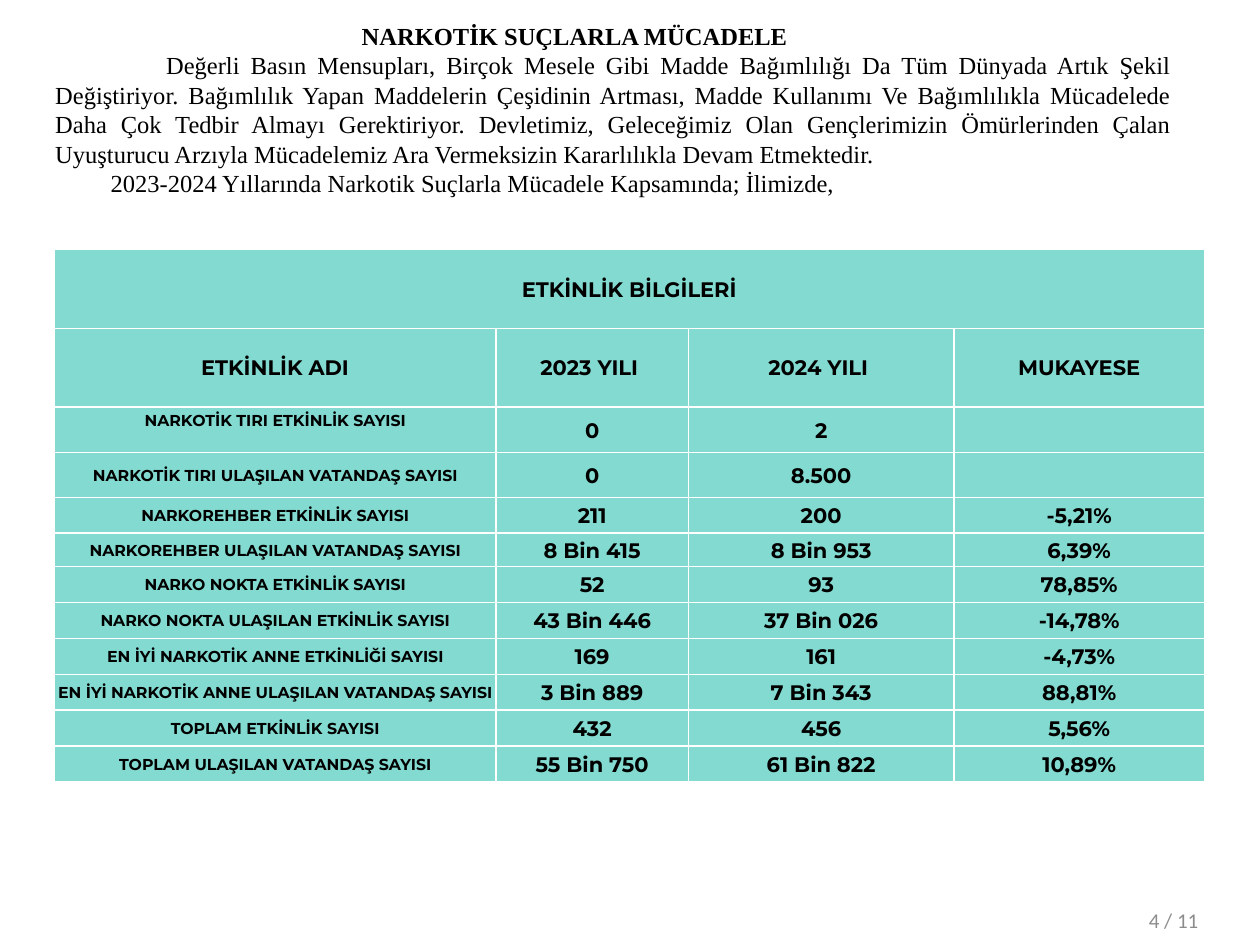
from pptx import Presentation
from pptx.dml.color import RGBColor
from pptx.enum.text import MSO_ANCHOR, MSO_AUTO_SIZE, PP_ALIGN
from pptx.oxml import parse_xml
from pptx.oxml.ns import nsdecls
from pptx.util import Inches, Pt

COLORS = {"ink": "000000", "cell": "82DAD0", "border": "FFFFFF", "number": "8C8C8C"}
SLIDE_WIDTH, SLIDE_HEIGHT = Inches(10), Inches(7.5)
COLUMN, ROW = SLIDE_WIDTH / 100, SLIDE_HEIGHT / 75

HEADING = "NARKOTİK SUÇLARLA MÜCADELE"
INTRO = [
    ("Değerli Basın Mensupları, Birçok Mesele Gibi Madde Bağımlılığı Da Tüm Dünyada Artık "
     "Şekil Değiştiriyor. Bağımlılık Yapan Maddelerin Çeşidinin Artması, Madde Kullanımı Ve "
     "Bağımlılıkla Mücadelede Daha Çok Tedbir Almayı Gerektiriyor. Devletimiz, Geleceğimiz "
     "Olan Gençlerimizin Ömürlerinden Çalan Uyuşturucu Arzıyla Mücadelemiz Ara Vermeksizin "
     "Kararlılıkla Devam Etmektedir.", 8.8),
    ("2023-2024 Yıllarında Narkotik Suçlarla Mücadele Kapsamında; İlimizde,", 4.4),
]
TABLE_TITLE = "ETKİNLİK BİLGİLERİ"
ACTIVITIES = [
    ("ETKİNLİK ADI", "2023 YILI ", "2024 YILI ", "MUKAYESE"),
    ("NARKOTİK TIRI ETKİNLİK SAYISI", "0", "2", ""),
    ("NARKOTİK TIRI ULAŞILAN VATANDAŞ SAYISI", "0", "8.500", ""),
    ("NARKOREHBER ETKİNLİK SAYISI", "211", "200", "-5,21%"),
    ("NARKOREHBER ULAŞILAN VATANDAŞ SAYISI", "8 Bin 415", "8 Bin 953", "6,39%"),
    ("NARKO NOKTA ETKİNLİK SAYISI", "52", "93", "78,85%"),
    ("NARKO NOKTA ULAŞILAN ETKİNLİK SAYISI", "43 Bin 446", "37 Bin 026", "-14,78%"),
    ("EN İYİ NARKOTİK ANNE ETKİNLİĞİ SAYISI", "169", "161", "-4,73%"),
    ("EN İYİ NARKOTİK ANNE ULAŞILAN VATANDAŞ SAYISI", "3 Bin 889", "7 Bin 343", "88,81%"),
    ("TOPLAM ETKİNLİK SAYISI", "432", "456", "5,56%"),
    ("TOPLAM ULAŞILAN VATANDAŞ SAYISI", "55 Bin 750", "61 Bin 822", "10,89%"),
]
COLUMN_WIDTHS = [35.1, 15.3, 21.1, 19.9]
ROW_HEIGHTS = [6.25, 6.25, 3.6, 3.55, 2.85, 2.65] + [2.85] * 6


def apply(target, values):
    for name, value in values.items():
        setattr(target, name, value)


def across(count):
    return round(count * COLUMN)


def down(count):
    return round(count * ROW)


def area(left, top, width, height):
    return {"left": across(left), "top": down(top),
            "width": across(width), "height": down(height)}


def write(para, text, font, size, color="ink", bold=False, align=PP_ALIGN.LEFT):
    para.alignment = align
    span = para.add_run()
    span.text = text
    apply(span.font, {"name": font, "size": Pt(size), "bold": bold})
    span.font.color.rgb = RGBColor.from_string(COLORS[color])


def add_heading(page, box):
    title = page.shapes.title
    apply(title, box)
    apply(title.text_frame, {"word_wrap": True, "auto_size": MSO_AUTO_SIZE.NONE,
                             "vertical_anchor": MSO_ANCHOR.TOP,
                             "margin_left": across(25.3)})
    write(title.text_frame.paragraphs[0], HEADING, "Times New Roman", 14, bold=True)


def add_intro(page, box):
    frame = page.shapes.add_textbox(**box).text_frame
    frame.word_wrap = True
    for index, (text, indent) in enumerate(INTRO):
        para = frame.add_paragraph() if index else frame.paragraphs[0]
        write(para, text, "Times New Roman", 14, align=PP_ALIGN.JUSTIFY)
        para._p.get_or_add_pPr().set("indent", str(across(indent)))


def add_borders(cell):
    properties = cell._tc.get_or_add_tcPr()
    for index, side in enumerate(("lnL", "lnR", "lnT", "lnB")):
        properties.insert(index, parse_xml(
            f'<a:{side} {nsdecls("a")} w="{Pt(1)}"><a:solidFill>'
            f'<a:srgbClr val="{COLORS["border"]}"/></a:solidFill></a:{side}>'))


def fill_cell(cell, text, size):
    apply(cell, {"vertical_anchor": MSO_ANCHOR.MIDDLE, "margin_left": across(0.1),
                 "margin_right": across(0.1), "margin_top": down(0.1), "margin_bottom": 0})
    cell.fill.solid()
    cell.fill.fore_color.rgb = RGBColor.from_string(COLORS["cell"])
    add_borders(cell)
    if text:
        write(cell.text_frame.paragraphs[0], text, "Montserrat", size,
              bold=True, align=PP_ALIGN.CENTER)


def add_activity_table(page, box):
    rows = [(TABLE_TITLE, "", "", "")] + ACTIVITIES
    table = page.shapes.add_table(len(rows), len(COLUMN_WIDTHS), **box).table
    apply(table, {"first_row": False, "horz_banding": False})
    for column, share in zip(table.columns, COLUMN_WIDTHS):
        column.width = round(box["width"] * share / sum(COLUMN_WIDTHS))
    for row, share in zip(table.rows, ROW_HEIGHTS):
        row.height = round(box["height"] * share / sum(ROW_HEIGHTS))
    for r, values in enumerate(rows):
        for c, text in enumerate(values):
            fill_cell(table.cell(r, c), text, 9 if r > 1 and c == 0 else 12)
    table.cell(0, 0).merge(table.cell(0, len(COLUMN_WIDTHS) - 1))
    apply(table.cell(2, 0), {"vertical_anchor": MSO_ANCHOR.TOP, "margin_top": down(0.3)})


def add_page_number(page, box):
    frame = page.shapes.add_textbox(**box).text_frame
    frame.word_wrap = True
    write(frame.paragraphs[0], "4 / 11", "Calibri", 12, color="number")


def main():
    deck = Presentation()
    apply(deck, {"slide_width": SLIDE_WIDTH, "slide_height": SLIDE_HEIGHT})
    page = deck.slides.add_slide(deck.slide_layouts[5])
    add_heading(page, area(3.4, 1.2, 90.6, 3))
    add_intro(page, area(3.4, 3.5, 90.6, 12.8))
    add_activity_table(page, area(4.3, 19.8, 91.3, 42.3))
    add_page_number(page, area(90.2, 71.5, 17.3, 3))
    deck.save("out.pptx")


if __name__ == "__main__":
    main()
